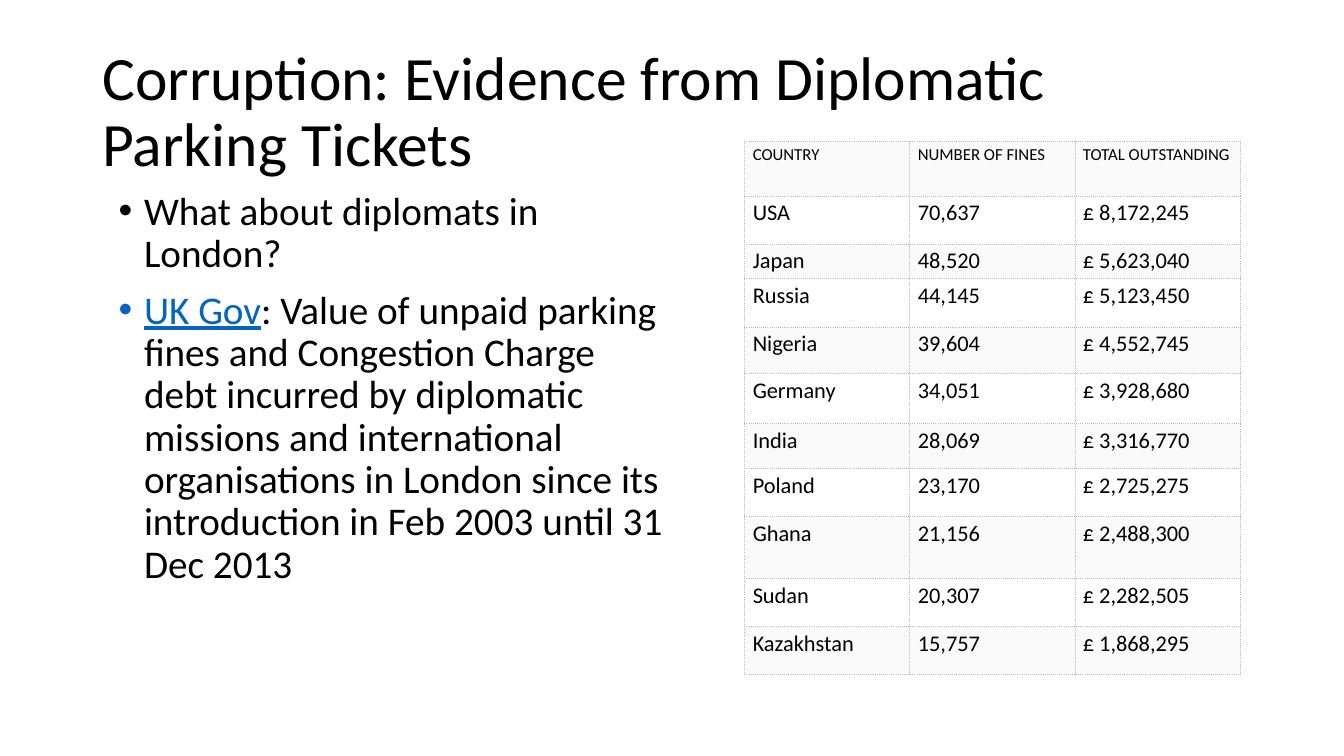
"""Build a slide on the unpaid parking fines of diplomats in London."""
from typing import NamedTuple

from lxml import etree
from pptx import Presentation
from pptx.dml.color import RGBColor
from pptx.enum.text import MSO_ANCHOR
from pptx.oxml.ns import qn
from pptx.util import Cm, Pt

MIDDLE = MSO_ANCHOR.MIDDLE
TOP = MSO_ANCHOR.TOP
FONT = "Calibri"
BLACK = "000000"
LINK_BLUE = "0563C1"
BORDER_GREY = "BBBBBB"
BAND_FILLS = ("FAFAFA", "FFFFFF")
COLUMN_WIDTH = 4.16
BULLET_INDENT = 0.64


class Box(NamedTuple):
    left: float
    top: float
    width: float
    height: float


class FineRow(NamedTuple):
    height: float
    country: str
    fines: str
    outstanding: str
    size: float = 16


class Phrase(NamedTuple):
    text: str
    color: str = BLACK
    underline: bool = False


TITLE_BOX = Box(2.33, 1.02, 29.21, 3.68)
POINTS_BOX = Box(2.74, 4.7, 14.4, 12.09)

FINE_ROWS = [
    FineRow(1.38, "COUNTRY", "NUMBER OF FINES", "TOTAL OUTSTANDING", 12),
    FineRow(1.21, "USA", "70,637", "£ 8,172,245"),
    FineRow(0.88, "Japan", "48,520", "£ 5,623,040"),
    FineRow(1.21, "Russia", "44,145", "£ 5,123,450"),
    FineRow(1.18, "Nigeria", "39,604", "£ 4,552,745"),
    FineRow(1.26, "Germany", "34,051", "£ 3,928,680"),
    FineRow(1.13, "India", "28,069", "£ 3,316,770"),
    FineRow(1.21, "Poland", "23,170", "£ 2,725,275"),
    FineRow(1.56, "Ghana", "21,156", "£ 2,488,300"),
    FineRow(1.21, "Sudan", "20,307", "£ 2,282,505"),
    FineRow(1.21, "Kazakhstan", "15,757", "£ 1,868,295"),
]
FINES_BOX = Box(18.77, 3.56, 3 * COLUMN_WIDTH, sum(row.height for row in FINE_ROWS))

POINTS = [
    [Phrase("What about diplomats in London?")],
    [
        Phrase("UK Gov", LINK_BLUE, True),
        Phrase(
            ": Value of unpaid parking fines and Congestion Charge debt incurred by "
            "diplomatic missions and international organisations in London since its "
            "introduction in Feb 2003 until 31 Dec 2013"
        ),
    ],
]


def rgb(value: str) -> RGBColor:
    return RGBColor.from_string(value)


def write(paragraph, text: str, *, size: float, color: str = BLACK, underline: bool = False) -> None:
    run = paragraph.add_run()
    run.text = text
    run.font.name = FONT
    run.font.size = Pt(size)
    run.font.color.rgb = rgb(color)
    run.font.underline = underline


def add_frame(slide, box: Box, anchor):
    frame = slide.shapes.add_textbox(*map(Cm, box)).text_frame
    frame.word_wrap = True
    frame.vertical_anchor = anchor
    return frame


def add_bullet(paragraph) -> None:
    properties = paragraph._p.get_or_add_pPr()
    properties.set("marL", str(Cm(BULLET_INDENT)))
    properties.set("indent", str(-Cm(BULLET_INDENT)))
    etree.SubElement(properties, qn("a:buFont"), typeface="Arial")
    etree.SubElement(properties, qn("a:buChar"), char="•")


def add_dotted_borders(cell) -> None:
    properties = cell._tc.get_or_add_tcPr()
    for position, side in enumerate(("a:lnL", "a:lnR", "a:lnT", "a:lnB")):
        line = etree.Element(qn(side), w=str(Pt(0.75)))
        fill = etree.SubElement(line, qn("a:solidFill"))
        etree.SubElement(fill, qn("a:srgbClr"), val=BORDER_GREY)
        etree.SubElement(line, qn("a:prstDash"), val="sysDot")
        properties.insert(position, line)


def add_title(slide) -> None:
    title = add_frame(slide, TITLE_BOX, MIDDLE).paragraphs[0]
    title.line_spacing = 0.9
    write(title, "Corruption: Evidence from Diplomatic Parking Tickets", size=44)


def add_points(slide) -> None:
    frame = add_frame(slide, POINTS_BOX, TOP)
    for index, phrases in enumerate(POINTS):
        point = frame.add_paragraph() if index else frame.paragraphs[0]
        point.line_spacing = 0.9
        point.space_before = Pt(10)
        add_bullet(point)
        for phrase in phrases:
            write(point, phrase.text, size=28, color=phrase.color, underline=phrase.underline)


def add_fines_table(slide) -> None:
    fines = slide.shapes.add_table(len(FINE_ROWS), 3, *map(Cm, FINES_BOX)).table
    fines.first_row = False
    fines.horz_banding = False
    for column in fines.columns:
        column.width = Cm(COLUMN_WIDTH)
    for index, (row, entry) in enumerate(zip(fines.rows, FINE_ROWS)):
        row.height = Cm(entry.height)
        for cell, text in zip(row.cells, (entry.country, entry.fines, entry.outstanding)):
            cell.margin_left = cell.margin_right = Cm(0.2)
            cell.margin_top = Cm(0.08)
            cell.margin_bottom = Cm(0.03)
            cell.fill.solid()
            cell.fill.fore_color.rgb = rgb(BAND_FILLS[index % 2])
            add_dotted_borders(cell)
            write(cell.text_frame.paragraphs[0], text, size=entry.size)


def main() -> None:
    presentation = Presentation()
    presentation.slide_width = Cm(33.87)
    presentation.slide_height = Cm(19.05)
    slide = presentation.slides.add_slide(presentation.slide_layouts[6])
    add_title(slide)
    add_fines_table(slide)
    add_points(slide)
    presentation.save("out.pptx")


if __name__ == "__main__":
    main()
